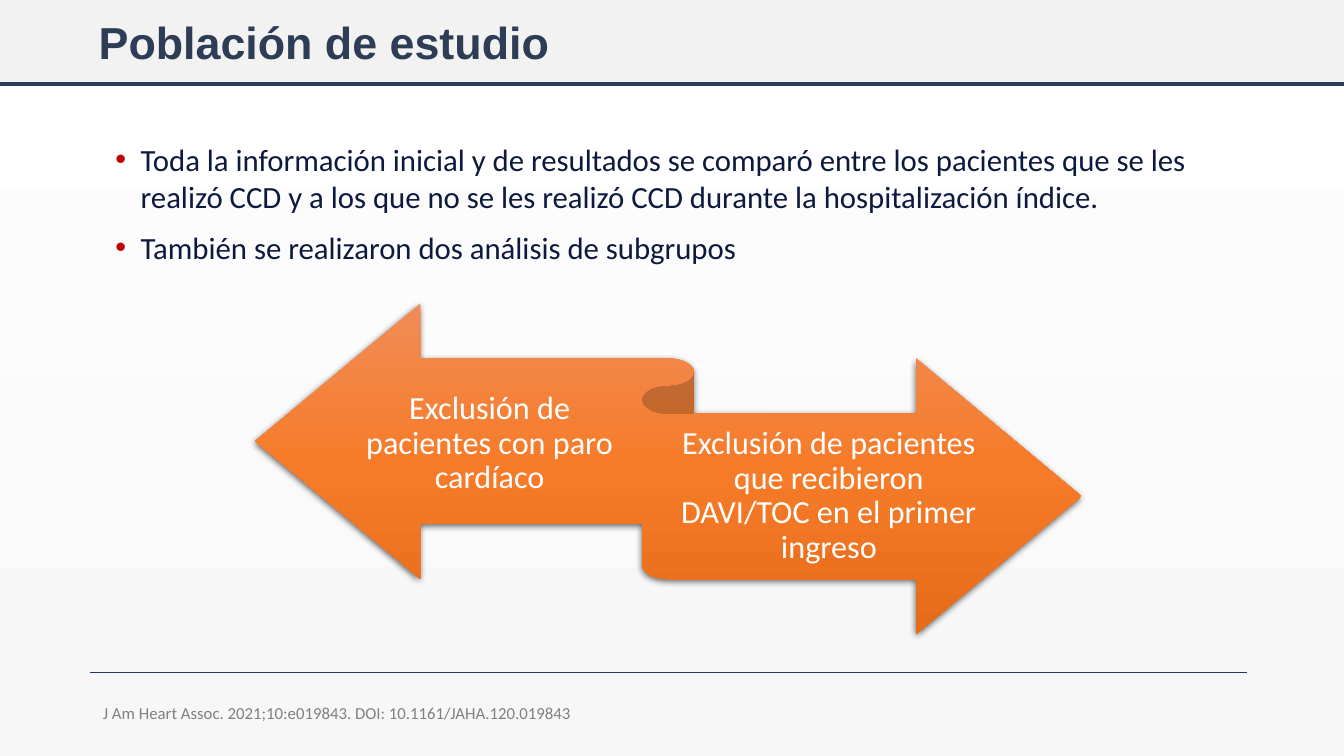
import copy

import pptx
import pptx.dml.color
import pptx.enum.shapes
import pptx.enum.text
import pptx.oxml
import pptx.oxml.ns
import pptx.util
from lxml import etree

COLOURS = {
    "white": "FFFFFF",
    "mist": "F7F7F7",
    "band": "F2F2F2",
    "navy": "2D3D55",
    "rule": "203864",
    "ink": "0D193F",
    "bullet": "C00000",
    "grey": "808080",
    "orange_light": "F18C57",
    "orange": "F67B28",
    "orange_dark": "E56C19",
    "black": "000000",
}
ALIGN = pptx.enum.text.PP_ALIGN
ANCHOR = pptx.enum.text.MSO_ANCHOR
SHAPE = pptx.enum.shapes.MSO_SHAPE
qn = pptx.oxml.ns.qn


class SlideBuilder:
    emu_per_px = 9525

    def __init__(self, presentation):
        self.slide = presentation.slides.add_slide(presentation.slide_layouts[6])

    def px(self, *lengths):
        return [pptx.util.Emu(length * self.emu_per_px) for length in lengths]

    def colour(self, name):
        return pptx.dml.color.RGBColor.from_string(COLOURS[name])

    def gradient(self, fill, element, stops):
        fill.gradient()
        fill.gradient_angle = 270
        stop_list = element.find(".//" + qn("a:gsLst"))
        while len(stop_list) < len(stops):
            stop_list.append(copy.deepcopy(stop_list[0]))
        for stop, (position, name) in zip(fill.gradient_stops, stops):
            stop.position = position
            stop.color.rgb = self.colour(name)

    def background(self, stops):
        self.gradient(self.slide.background.fill, self.slide.element, stops)

    def shape(self, preset, box):
        shape = self.slide.shapes.add_shape(preset, *self.px(*box))
        shape.shadow.inherit = False
        shape.line.fill.background()
        return shape

    def rectangle(self, box, fill):
        shape = self.shape(SHAPE.RECTANGLE, box)
        shape.fill.solid()
        shape.fill.fore_color.rgb = self.colour(fill)

    def ribbon(self, box, stops):
        shape = self.shape(SHAPE.LEFT_RIGHT_RIBBON, box)
        self.gradient(shape.fill, shape.element, stops)
        effects = shape.element.spPr.find(qn("a:effectLst"))
        shadow = etree.SubElement(
            effects, qn("a:outerShdw"), blurRad="57150", dist="19050",
            dir="5400000", algn="ctr", rotWithShape="0")
        tint = etree.SubElement(shadow, qn("a:srgbClr"), val=COLOURS["black"])
        etree.SubElement(tint, qn("a:alpha"), val="63000")

    def line(self, start, end, colour, width):
        connector = self.slide.shapes.add_connector(
            pptx.enum.shapes.MSO_CONNECTOR.STRAIGHT, *self.px(*start, *end))
        connector.line.color.rgb = self.colour(colour)
        connector.line.width = pptx.util.Pt(width)
        etree.SubElement(connector.element.spPr, qn("a:effectLst"))

    def bullet(self, paragraph, colour):
        properties = paragraph._p.get_or_add_pPr()
        indent = self.px(24)[0]
        properties.set("marL", str(indent))
        properties.set("indent", str(-indent))
        bullet_colour = etree.SubElement(properties, qn("a:buClr"))
        etree.SubElement(bullet_colour, qn("a:srgbClr"), val=COLOURS[colour])
        etree.SubElement(properties, qn("a:buFont"), typeface="Arial")
        etree.SubElement(properties, qn("a:buChar"), char="•")

    def text(self, box, paragraphs, size, colour, font="Calibri", bold=False,
             align=ALIGN.LEFT, anchor=ANCHOR.TOP, spacing=0.9, bullet=None,
             side_inset=10):
        frame = self.slide.shapes.add_textbox(*self.px(*box)).text_frame
        frame.word_wrap = True
        frame.vertical_anchor = anchor
        frame.margin_left = frame.margin_right = self.px(side_inset)[0]
        for index, wording in enumerate(paragraphs):
            paragraph = frame.add_paragraph() if index else frame.paragraphs[0]
            if bullet:
                self.bullet(paragraph, bullet)
            paragraph.alignment = align
            paragraph.line_spacing = spacing
            if index:
                paragraph.space_before = pptx.util.Pt(10)
            run = paragraph.add_run()
            run.text = wording
            run.font.name = font
            run.font.size = pptx.util.Pt(size)
            run.font.bold = bold
            run.font.color.rgb = self.colour(colour)


def main():
    presentation = pptx.Presentation()
    presentation.slide_width = pptx.util.Emu(1280 * SlideBuilder.emu_per_px)
    presentation.slide_height = pptx.util.Emu(720 * SlideBuilder.emu_per_px)
    builder = SlideBuilder(presentation)

    builder.background([(0, "white"), (1, "mist")])
    builder.rectangle((0, 0, 1280, 80), "band")
    builder.line((0, 80), (1280, 80), "navy", 3)
    builder.line((86, 640), (1188, 640), "rule", 0.5)

    builder.text((100, 129, 1104, 195), [
        "Toda la información inicial y de resultados se comparó entre los "
        "pacientes que se les realizó CCD y a los que no se les realizó CCD "
        "durante la hospitalización índice.",
        "También se realizaron dos análisis de subgrupos",
    ], 22, "ink", spacing=1.0, bullet="bullet")
    builder.text((84, -8, 1104, 102), ["Población de estudio"], 32, "navy",
                 font="Arial", bold=True, anchor=ANCHOR.MIDDLE)

    builder.ribbon((243, 289, 787, 315), [
        (0, "orange_light"), (0.5, "orange"), (1, "orange_dark")])
    for box, wording in (
        ((337, 345, 259, 155), "Exclusión de pacientes con paro cardíaco"),
        ((636, 395, 307, 155), "Exclusión de pacientes que recibieron "
                               "DAVI/TOC en el primer ingreso"),
    ):
        builder.text(box, [wording], 23, "white", align=ALIGN.CENTER,
                     anchor=ANCHOR.MIDDLE, side_inset=0)

    builder.text((88, 667, 633, 53), [
        "J Am Heart Assoc. 2021;10:e019843. DOI: 10.1161/JAHA.120.019843",
    ], 12, "grey")
    presentation.save("out.pptx")


if __name__ == "__main__":
    main()
